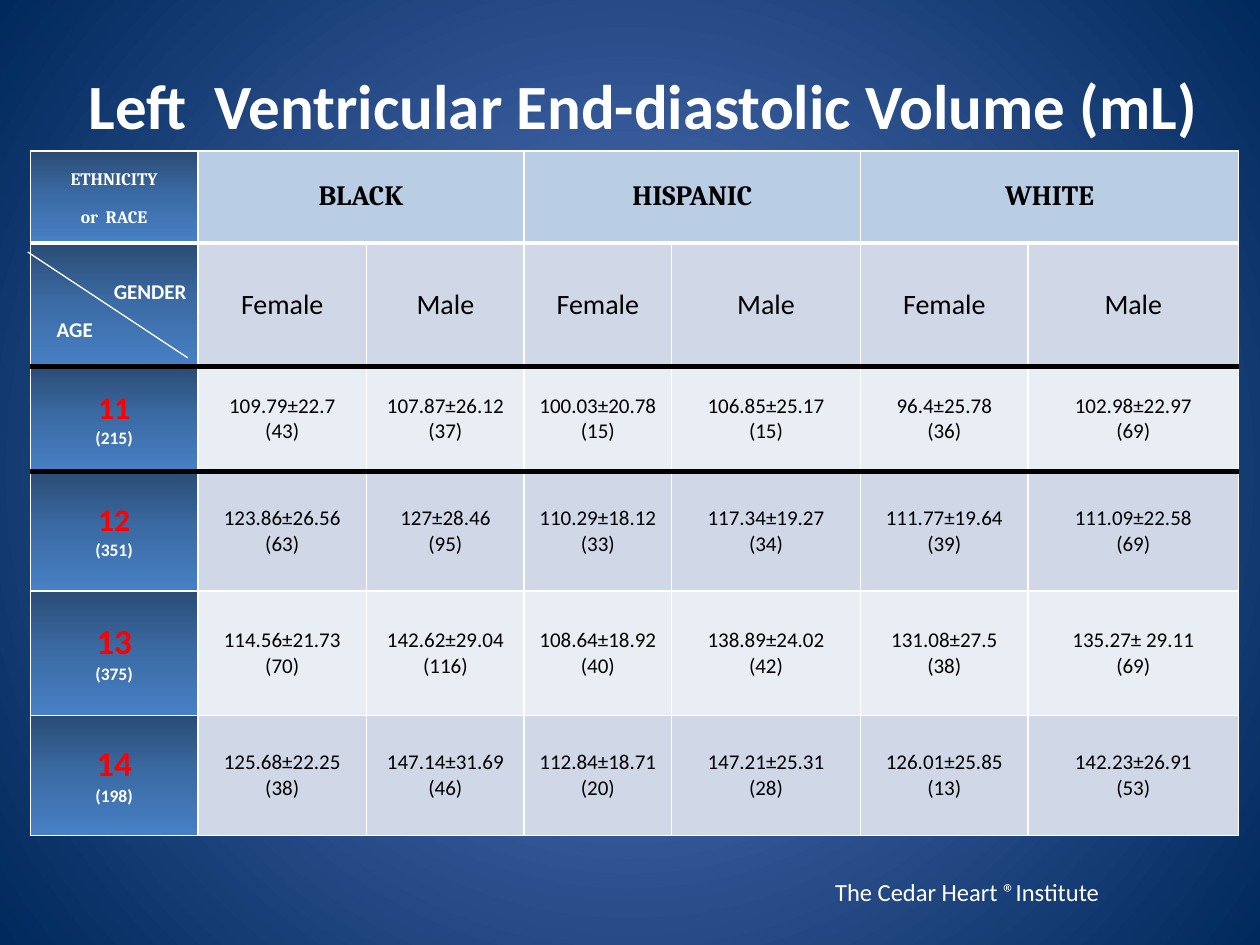
from dataclasses import dataclass
from itertools import product

from lxml.etree import SubElement
from pptx import Presentation
from pptx.dml.color import RGBColor
from pptx.enum.shapes import MSO_CONNECTOR
from pptx.enum.text import MSO_ANCHOR, MSO_AUTO_SIZE, PP_ALIGN
from pptx.oxml.ns import qn
from pptx.util import Pt

PX = 9144


@dataclass(frozen=True)
class Theme:
    sans: str = "Calibri"
    serif: str = "Cambria"
    white: str = "FFFFFF"
    black: str = "000000"
    red: str = "FF0000"
    head: str = "B9CDE5"
    bands: tuple = ("D0D8E8", "E9EDF4")
    side: tuple = ((0, "2A4C75"), (50, "3C6CA6"), (100, "4780C5"))
    back: tuple = ((0, "5E7CC5"), (100, "00295C"))
    title: int = 36
    group: int = 16
    foot: int = 14
    body: int = 12
    small: int = 10


T = Theme()
COLS = (133, 134, 125, 117, 150, 133, 167)
ROWS = (73, 98, 83, 95, 99, 95)
GROUPS = ("BLACK", "HISPANIC", "WHITE")
AGES = (
    ("11", 215, 18, ("109.79±22.7", 43), ("107.87±26.12", 37), ("100.03±20.78", 15),
     ("106.85±25.17", 15), ("96.4±25.78", 36), ("102.98±22.97", 69)),
    ("12", 351, 18, ("123.86±26.56", 63), ("127±28.46", 95), ("110.29±18.12", 33),
     ("117.34±19.27", 34), ("111.77±19.64", 39), ("111.09±22.58", 69)),
    ("13", 375, 20, ("114.56±21.73", 70), ("142.62±29.04", 116), ("108.64±18.92", 40),
     ("138.89±24.02", 42), ("131.08±27.5", 38), ("135.27± 29.11", 69)),
    ("14", 198, 20, ("125.68±22.25", 38), ("147.14±31.69", 46), ("112.84±18.71", 20),
     ("147.21±25.31", 28), ("126.01±25.85", 13), ("142.23±26.91", 53)),
)


def put(obj, **vals):
    for key, val in vals.items():
        setattr(obj, key, val)


def place(shape, box):
    names = ("left", "top", "width", "height")
    put(shape, **{name: val * PX for name, val in zip(names, box)})


def write(frame, lines, size=T.body, color=T.black, bold=False, font=T.sans,
          **form):
    frame.text = "\n".join(lines)
    for par in frame.paragraphs:
        put(par, **{"alignment": PP_ALIGN.CENTER, **form})
        for run in par.runs:
            style(run, size, color, bold, font)


def style(run, size, color, bold, font=T.sans):
    put(run.font, size=Pt(size), bold=bold, name=font)
    run.font.color.rgb = RGBColor.from_string(color)


def tint(node, color):
    SubElement(node, qn("a:srgbClr"), val=color)


def blend(fill, root, stops, round=False):
    fill.gradient()
    grad = next(root.iter(qn("a:gradFill")))
    for kid in list(grad):
        grad.remove(kid)
    group = SubElement(grad, qn("a:gsLst"))
    for pos, color in stops:
        tint(SubElement(group, qn("a:gs"), pos=str(pos * 1000)), color)
    if round:
        path = SubElement(grad, qn("a:path"), path="circle")
        SubElement(path, qn("a:fillToRect"), dict.fromkeys("ltrb", "50000"))
    else:
        SubElement(grad, qn("a:lin"), ang="5400000", scaled="0")


def edge(cell, **sides):
    props = cell._tc.get_or_add_tcPr()
    for side in "LRTB":
        color, width = sides.get(side, (T.white, 1))
        line = SubElement(props, qn("a:ln" + side), w=str(Pt(width)))
        tint(SubElement(line, qn("a:solidFill")), color)


def paint(cell, row, col):
    thick, pale = (T.black, 3), (T.white, 3)
    lines = {0: {"B": pale}, 1: {"T": pale, "B": thick},
             2: {"T": thick, "B": thick}, 3: {"T": thick}}
    edge(cell, **lines.get(row, {}))
    put(cell, margin_left=2 * PX, margin_right=2 * PX, margin_top=0, margin_bottom=0,
        vertical_anchor=MSO_ANCHOR.MIDDLE if row else MSO_ANCHOR.TOP)
    if col == 0:
        blend(cell.fill, cell._tc, T.side)
    else:
        cell.fill.solid()
        color = T.bands[(row + 1) % 2] if row else T.head
        cell.fill.fore_color.rgb = RGBColor.from_string(color)


def heads(grid):
    write(grid.cell(0, 0).text_frame, ("ETHNICITY", "or  RACE"), T.small,
          T.white, True, T.serif, line_spacing=1.9)
    for num, name in enumerate(GROUPS):
        col = 1 + 2 * num
        first = grid.cell(0, col)
        first.merge(grid.cell(0, col + 1))
        write(first.text_frame, (name,), T.group, T.black, True, T.serif,
              line_spacing=1.9)
        for step, sex in enumerate(("Female", "Male")):
            write(grid.cell(1, col + step).text_frame, (sex,), T.group)
    key = grid.cell(1, 0)
    put(key, margin_left=21 * PX, margin_right=9 * PX)
    write(key.text_frame, ("GENDER", "AGE"), T.body, T.white, True, line_spacing=1.5)
    for par, side in zip(key.text_frame.paragraphs, (PP_ALIGN.RIGHT, PP_ALIGN.LEFT)):
        par.alignment = side


def ages(grid):
    for row, (age, total, size, *vals) in enumerate(AGES, 2):
        frame = grid.cell(row, 0).text_frame
        write(frame, (age, f"({total})"), T.small, T.white, True)
        style(frame.paragraphs[0].runs[0], size, T.red, True)
        for col, (mean, count) in enumerate(vals, 1):
            write(grid.cell(row, col).text_frame, (mean, f"({count})"))


def chart(slide, box):
    left, top, wide, high = (val * PX for val in box)
    grid = slide.shapes.add_table(len(ROWS), len(COLS), left, top, wide, high).table
    for col, size in zip(grid.columns, COLS):
        col.width = size * PX
    for row, size in zip(grid.rows, ROWS):
        row.height = size * PX
    for row, col in product(range(len(ROWS)), range(len(COLS))):
        paint(grid.cell(row, col), row, col)
    heads(grid)
    ages(grid)
    slash(slide, (box[0] - 2, box[1] + 80, 127, 84))


def slash(slide, box):
    left, top, wide, high = (val * PX for val in box)
    line = slide.shapes.add_connector(MSO_CONNECTOR.STRAIGHT, left + wide,
                                      top + high, left, top)
    line.line.width = Pt(0.75)
    line.line.color.rgb = RGBColor.from_string(T.white)
    SubElement(line._element.spPr, qn("a:effectLst"))


def title(slide, box):
    shape = slide.shapes.title
    place(shape, box)
    write(shape.text_frame, ("Left  Ventricular End-diastolic Volume (mL)",),
          T.title, T.white, True, line_spacing=1.9)
    put(shape.text_frame, word_wrap=True, auto_size=MSO_AUTO_SIZE.NONE,
        vertical_anchor=MSO_ANCHOR.TOP)


def foot(slide, box):
    shape = slide.shapes.add_textbox(*(val * PX for val in box))
    shape.text_frame.word_wrap = True
    write(shape.text_frame, ("The Cedar Heart ®Institute",), T.foot, T.white,
          alignment=PP_ALIGN.LEFT)


def main():
    deck = Presentation()
    put(deck, slide_width=1000 * PX, slide_height=750 * PX)
    slide = deck.slides.add_slide(deck.slide_layouts[5])
    blend(slide.background.fill, slide.element, T.back, True)
    chart(slide, (24, 120, sum(COLS), sum(ROWS)))
    title(slide, (44, -6, 933, 125))
    foot(slide, (653, 691, 344, 34))
    deck.save("out.pptx")


if __name__ == "__main__":
    main()
